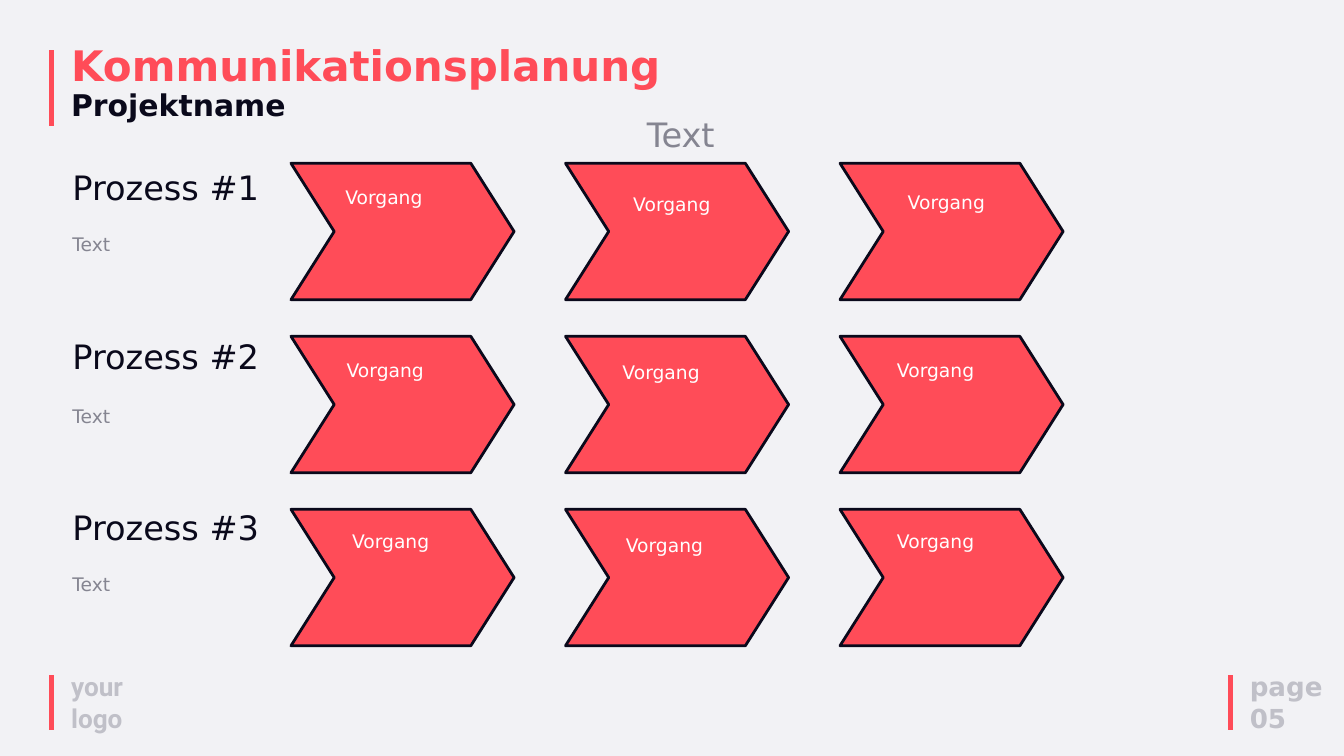
from pptx import Presentation
from pptx.dml.color import RGBColor
from pptx.enum.shapes import MSO_CONNECTOR as CONN, MSO_SHAPE as SHAPE
from pptx.enum.text import PP_ALIGN as ALIGN
from pptx.oxml.ns import qn
from pptx.util import Inches, Pt

W, H = 20, 11.25
RED, INK, GREY, PALE, WHITE, BACK = "FF4C58", "0A091B", "858591", "C0C0C8", "FFFFFF", "F2F2F5"
FONT = "DejaVu Sans"

# Chevron grid: origin, pitch and size of a cell
LEFT, TOP, COL, ROW = 4.33, 2.43, 4.085, 2.575
CELL_W, CELL_H = 3.32, 2.03

# Per process: offsets of its heading and text from the row top,
# then the offset of each step label from its chevron
PROCESSES = [
    (0, 0.98, [(0.71, 0.28), (0.91, 0.39), (0.91, 0.36)]),
    (-0.06, 0.97, [(0.73, 0.28), (0.75, 0.31), (0.75, 0.28)]),
    (-0.08, 0.89, [(0.81, 0.26), (0.8, 0.31), (0.75, 0.26)]),
]


def rgb(value):
    return RGBColor.from_string(value)


def add_text(slide, box, paragraphs, align=ALIGN.LEFT, spacing=None):
    """Each paragraph is a list of (text, format) runs, parted by line breaks."""
    tf = slide.shapes.add_textbox(*map(Inches, box)).text_frame
    tf.word_wrap = True
    for i, runs in enumerate(paragraphs):
        p = tf.paragraphs[0] if i == 0 else tf.add_paragraph()
        p.alignment, p.line_spacing = align, spacing
        for j, (text, style) in enumerate(runs):
            if j:
                p.add_line_break()
            r = p.add_run()
            r.text = text
            r.font.color.rgb = rgb(style["color"])
            for key, value in style.items():
                if key != "color":
                    setattr(r.font, key, value)


def style(size, color, bold=False, name=FONT):
    return {"size": Pt(size), "color": color, "bold": bold, "name": name}


def add_bar(slide, x, top, bottom):
    line = slide.shapes.add_connector(CONN.STRAIGHT, *map(Inches, (x, top, x, bottom)))
    line.line.color.rgb = rgb(RED)
    line.line.width = Pt(5)
    sp_pr = line._element.spPr
    sp_pr.append(sp_pr.makeelement(qn("a:effectLst"), {}))


def add_header(slide, x, y):
    add_bar(slide, x, y, y + 1.13)
    add_text(slide, (x + 0.19, y - 0.13, 9.29, 1.27),
             [[("Kommunikationsplanung", style(45, RED, True)),
               ("Projektname", style(32, INK, True))]], spacing=0.9)


def add_footer_mark(slide, x, y, width, lines, name=FONT):
    add_bar(slide, x, y, y + 0.81)
    add_text(slide, (x + 0.19, y - 0.12, width, 1.04),
             [[(line, style(28, PALE, True, name))] for line in lines])


def add_step(slide, x, y, label_offset):
    sp = slide.shapes.add_shape(SHAPE.CHEVRON, *map(Inches, (x, y, CELL_W, CELL_H)))
    sp.adjustments[0] = 0.317
    sp.shadow.inherit = False
    sp.fill.solid()
    sp.fill.fore_color.rgb = rgb(RED)
    sp.line.color.rgb = rgb(INK)
    sp.line.width = Pt(3)
    dx, dy = label_offset
    add_text(slide, (x + dx, y + dy, 2.17, 0.44), [[("Vorgang", style(20, WHITE))]])


def add_process(slide, number, y, heading_dy, text_dy, labels):
    x = 0.98
    add_text(slide, (x, y + heading_dy, 3.18, 0.71),
             [[(f"Prozess #{number}", style(36, INK))]])
    add_text(slide, (x, y + text_dy, 3.18, 0.44), [[("Text", style(20, GREY))]])
    for col, offset in enumerate(labels):
        add_step(slide, LEFT + col * COL, y, offset)


def main():
    prs = Presentation()
    prs.slide_width, prs.slide_height = Inches(W), Inches(H)
    slide = prs.slides.add_slide(prs.slide_layouts[6])
    slide.background.fill.solid()
    slide.background.fill.fore_color.rgb = rgb(BACK)

    add_header(slide, 0.77, 0.75)
    add_text(slide, (5.67, 1.65, 8.92, 0.71), [[("Text", style(36, GREY))]], ALIGN.CENTER)
    for row, process in enumerate(PROCESSES):
        add_process(slide, row + 1, TOP + row * ROW, *process)
    add_footer_mark(slide, 0.77, 10.05, 1.19, ["your logo"], "Roboto")
    add_footer_mark(slide, 18.31, 10.05, 1.9, ["page", "05"])
    prs.save("out.pptx")


if __name__ == "__main__":
    main()
